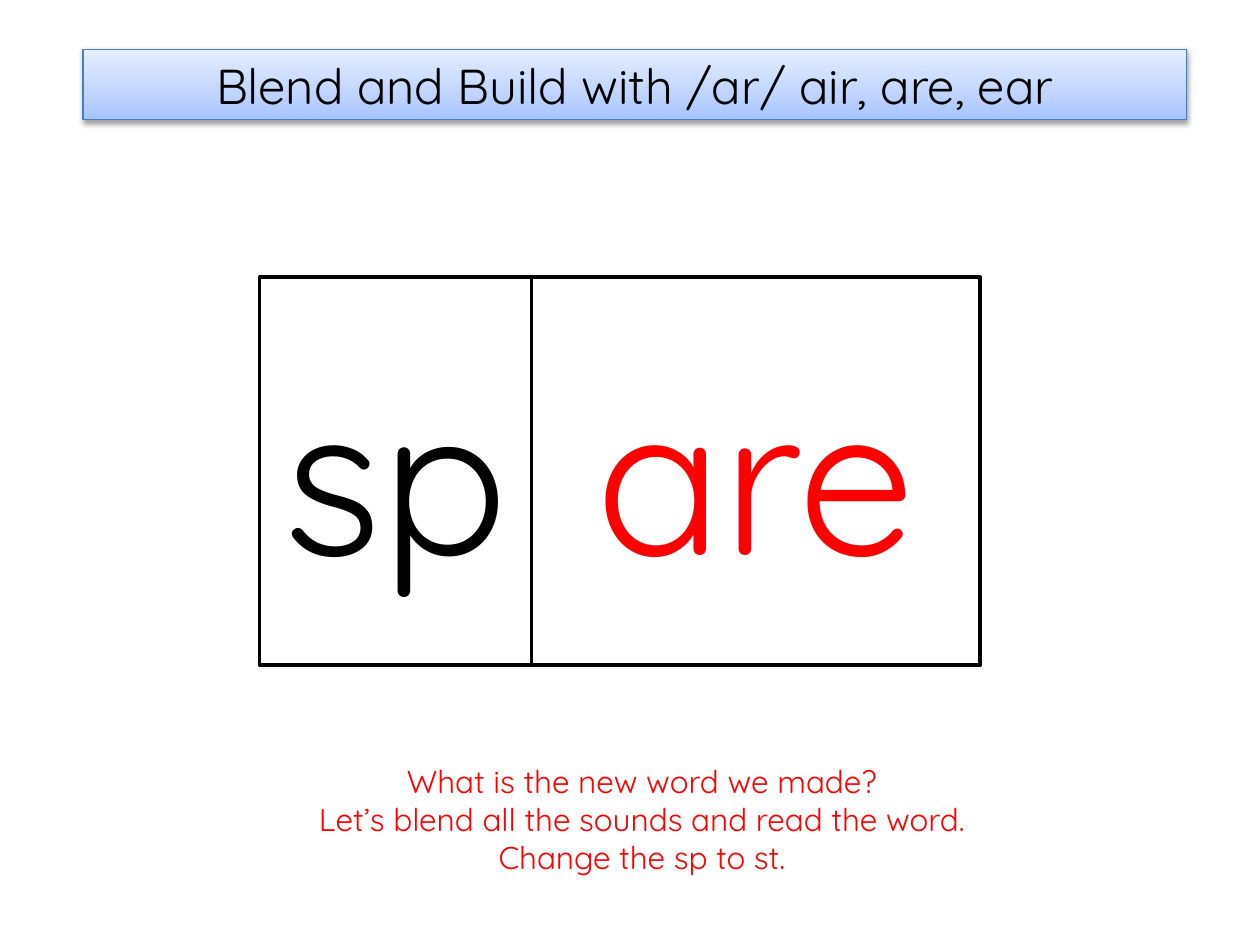
import copy
import pptx
import pptx.util
import pptx.dml.color
import pptx.enum.shapes
import pptx.enum.text
import pptx.oxml
import pptx.oxml.ns

Inches = pptx.util.Inches
Pt = pptx.util.Pt


def color(value):
    return pptx.dml.color.RGBColor.from_string(value)


def write(frame, lines, size, value):
    frame.word_wrap = True
    for index, line in enumerate(lines):
        para = frame.add_paragraph() if index else frame.paragraphs[0]
        para.alignment = pptx.enum.text.PP_ALIGN.CENTER
        span = para.add_run()
        span.text = line
        span.font.size = Pt(size)
        span.font.name = "Quicksand"
        span.font.color.rgb = color(value)


deck = pptx.Presentation()
deck.slide_width = Inches(10)
deck.slide_height = Inches(7.5)
page = deck.slides.add_slide(deck.slide_layouts[5])

title = page.shapes.title
title.left, title.top = Inches(0.66), Inches(0.39)
title.width, title.height = Inches(8.76), Inches(0.56)
title.text_frame.auto_size = pptx.enum.text.MSO_AUTO_SIZE.NONE
title.text_frame.vertical_anchor = pptx.enum.text.MSO_ANCHOR.MIDDLE
write(title.text_frame, ["Blend and Build with /ar/ air, are, ear"], 28, "000000")

title.fill.gradient()
title.fill.gradient_angle = 90
first_stop = title.element.spPr.find(".//" + pptx.oxml.ns.qn("a:gs"))
first_stop.addnext(copy.deepcopy(first_stop))
stops = [(0, "A4C4FF"), (0.35, "BFD4FF"), (1, "E6EEFF")]
for stop, (position, value) in zip(title.fill.gradient_stops, stops):
    stop.position = position
    stop.color.rgb = color(value)
title.line.color.rgb = color("4B7EBC")
title.line.width = Pt(0.75)
title.element.spPr.append(pptx.oxml.parse_xml(
    f'<a:effectLst {pptx.oxml.ns.nsdecls("a")}>'
    f'<a:outerShdw blurRad="{Pt(3.1)}" dist="{Pt(1.6)}" dir="5400000" rotWithShape="0">'
    '<a:srgbClr val="000000"><a:alpha val="38000"/></a:srgbClr>'
    '</a:outerShdw></a:effectLst>'))

left = 2.06
for letters, width, value in [("sp", 2.16, "000000"), ("are", 3.56, "FF0000")]:
    box = page.shapes.add_shape(
        pptx.enum.shapes.MSO_SHAPE.RECTANGLE,
        Inches(left), Inches(2.2), Inches(width), Inches(3.08))
    box.shadow.inherit = False
    box.fill.solid()
    box.fill.fore_color.rgb = color("FFFFFF")
    box.line.color.rgb = color("000000")
    box.line.width = Pt(2)
    box.text_frame.vertical_anchor = pptx.enum.text.MSO_ANCHOR.MIDDLE
    write(box.text_frame, [letters], 120, value)
    left += width

prompt = page.shapes.add_textbox(Inches(1.61), Inches(6), Inches(6.97), Inches(1.01))
prompt.text_frame.auto_size = pptx.enum.text.MSO_AUTO_SIZE.SHAPE_TO_FIT_TEXT
write(prompt.text_frame, [
    "What is the new word we made?",
    "Let’s blend all the sounds and read the word.",
    "Change the sp to st.",
], 18, "FF0000")

deck.save("out.pptx")
